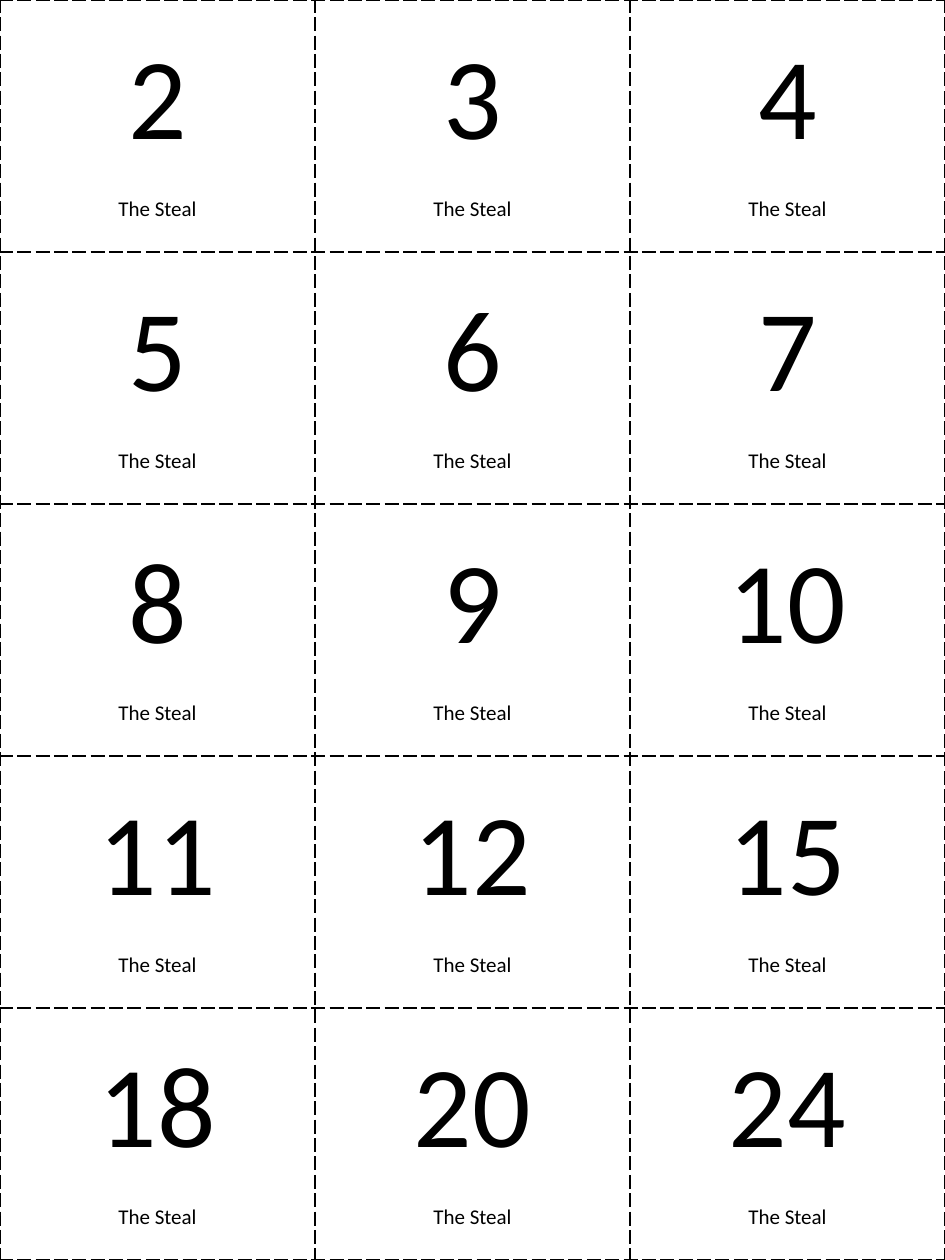
import pptx
import pptx.dml.color
import pptx.enum.text
import pptx.oxml
import pptx.oxml.ns
import pptx.util

Inches = pptx.util.Inches
Pt = pptx.util.Pt

COLORS = {"ink": "000000"}
FONT = "Calibri"
CAPTION = "The Steal"
CARD_VALUES = [2, 3, 4, 5, 6, 7, 8, 9, 10, 11, 12, 15, 18, 20, 24]
COLUMNS = 3


def add_dashed_borders(cell):
    """Draw a dashed cutting line on each side of a cell."""
    properties = cell._tc.get_or_add_tcPr()
    for side in ("lnL", "lnR", "lnT", "lnB"):
        properties.append(pptx.oxml.parse_xml(
            f'<a:{side} {pptx.oxml.ns.nsdecls("a")} w="{Pt(1.5)}">'
            f'<a:solidFill><a:srgbClr val="{COLORS["ink"]}"/></a:solidFill>'
            f'<a:prstDash val="dash"/></a:{side}>'
        ))


def format_paragraph(paragraph, size):
    """Centre a paragraph and style its runs."""
    paragraph.alignment = pptx.enum.text.PP_ALIGN.CENTER
    for run in paragraph.runs:
        run.font.name = FONT
        run.font.size = Pt(size)
        run.font.color.rgb = pptx.dml.color.RGBColor.from_string(COLORS["ink"])


def fill_card(cell, value):
    """Write one card: a large number above the caption."""
    add_dashed_borders(cell)
    cell.fill.background()
    cell.vertical_anchor = pptx.enum.text.MSO_ANCHOR.MIDDLE
    cell.text_frame.text = f"{value}\n{CAPTION}"
    number, caption = cell.text_frame.paragraphs
    format_paragraph(number, 66)
    format_paragraph(caption, 12)
    caption.space_before = Pt(14.65)


def add_card_sheet(slide, left, top, width, height):
    """Place the grid of cards in the given box."""
    rows = len(CARD_VALUES) // COLUMNS
    table = slide.shapes.add_table(rows, COLUMNS, left, top, width, height).table
    table.first_row = False
    table.horz_banding = False
    for index, value in enumerate(CARD_VALUES):
        fill_card(table.cell(*divmod(index, COLUMNS)), value)


def main():
    """Build and save the sheet of cards."""
    presentation = pptx.Presentation()
    presentation.slide_width = Inches(7.5)
    presentation.slide_height = Inches(10)
    slide = presentation.slides.add_slide(presentation.slide_layouts[6])
    add_card_sheet(slide, Inches(0), Inches(0), Inches(7.5), Inches(10))
    presentation.save("out.pptx")


if __name__ == "__main__":
    main()
